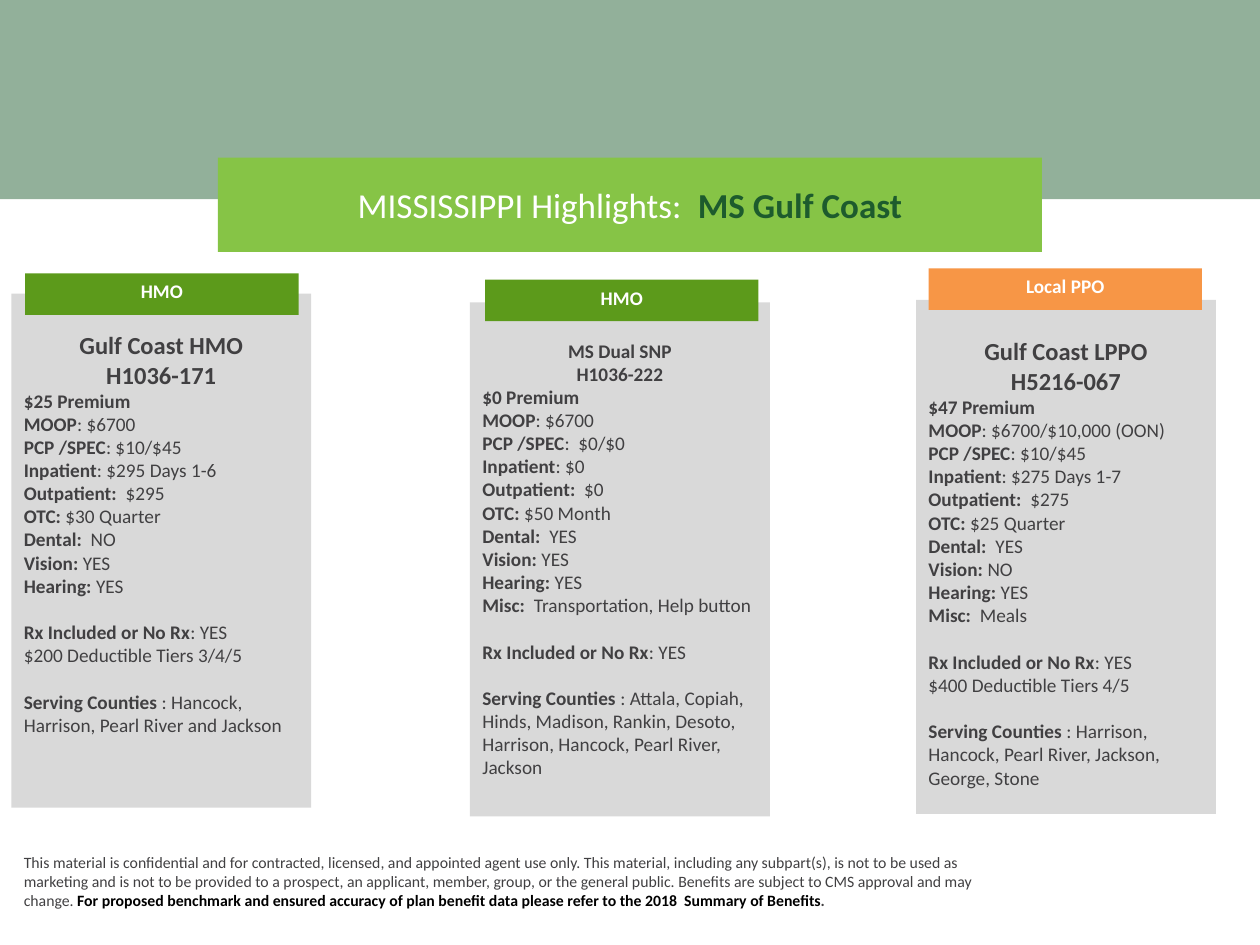
from lxml.etree import SubElement
from pptx import Presentation
from pptx.dml.color import RGBColor
from pptx.enum.shapes import MSO_SHAPE
from pptx.enum.text import MSO_ANCHOR, MSO_AUTO_SIZE, PP_ALIGN
from pptx.oxml.ns import qn
from pptx.util import Inches, Pt

COLORS = {
    "forest": "1D5B2D",
    "lime": "86C446",
    "leaf": "5C9A1B",
    "orange": "F79646",
    "panel": "D9D9D9",
    "text": "414042",
    "white": "FFFFFF",
    "black": "000000",
}
COLUMNS, ROWS = 100, 75

PLANS = [
    {
        "panel": (0.9, 23.3), "tab": (2, 21.7), "kind": "HMO", "color": "leaf",
        "name": ("Gulf Coast HMO", "H1036-171"), "name_size": 14,
        "sections": [
            [("$25 Premium", ""), ("MOOP", ": $6700"), ("PCP /SPEC", ": $10/$45"),
             ("Inpatient", ": $295 Days 1-6"), ("Outpatient:  ", "$295"),
             ("OTC:", " $30 Quarter"), ("Dental:  ", "NO"), ("Vision: ", "YES"),
             ("Hearing: ", "YES")],
            [("Rx Included or No Rx", ": YES"), ("", "$200 Deductible Tiers 3/4/5")],
            [("Serving Counties ", ": Hancock, Harrison, Pearl River and Jackson")],
        ],
    },
    {
        "panel": (37.3, 24), "tab": (38.5, 22.2), "kind": "HMO", "color": "leaf",
        "name": ("MS Dual SNP", "H1036-222"), "name_size": 11,
        "sections": [
            [("$0 Premium", ""), ("MOOP", ": $6700"), ("PCP /SPEC", ":  $0/$0"),
             ("Inpatient", ": $0"), ("Outpatient:  ", "$0"),
             ("OTC:", " $50 Month"), ("Dental:  ", "YES"), ("Vision: ", "YES"),
             ("Hearing: ", "YES"), ("Misc:  ", "Transportation, Help button")],
            [("Rx Included or No Rx", ": YES")],
            [("Serving Counties ", ": Attala, Copiah, Hinds, Madison, Rankin, Desoto, "
              "Harrison, Hancock, Pearl River, Jackson")],
        ],
    },
    {
        "panel": (72.7, 23.8), "tab": (73.7, 21.3), "kind": "Local PPO", "color": "orange",
        "name": ("Gulf Coast LPPO", "H5216-067"), "name_size": 14,
        "sections": [
            [("$47 Premium", ""), ("MOOP", ": $6700/$10,000 (OON)"), ("PCP /SPEC", ": $10/$45"),
             ("Inpatient", ": $275 Days 1-7"), ("Outpatient:  ", "$275"),
             ("OTC:", " $25 Quarter"), ("Dental:  ", "YES"), ("Vision: ", "NO"),
             ("Hearing: ", "YES"), ("Misc:  ", "Meals")],
            [("Rx Included or No Rx", ": YES"), ("", "$400 Deductible Tiers 4/5")],
            [("Serving Counties ", ": Harrison, Hancock, Pearl River, Jackson, George, Stone")],
        ],
    },
]


def add_text(paragraph, text, size=11, color="text", bold=False, font="Calibri"):
    run = paragraph.add_run()
    run.text = text
    run.font.name = font
    run.font.size = Pt(size)
    run.font.bold = bold
    run.font.color.rgb = RGBColor.from_string(COLORS[color])


class HighlightsSlide:
    """Holds the grid and the current slide, and draws each kind of element."""

    def __init__(self, presentation):
        self.column = presentation.slide_width / COLUMNS
        self.row = presentation.slide_height / ROWS
        self.slide = presentation.slides.add_slide(presentation.slide_layouts[5])

    def place(self, left, top, width, height):
        return (round(left * self.column), round(top * self.row),
                round(width * self.column), round(height * self.row))

    def block(self, box, color, opacity=None):
        shape = self.slide.shapes.add_shape(MSO_SHAPE.RECTANGLE, *self.place(*box))
        shape.shadow.inherit = False
        shape.line.fill.background()
        shape.fill.solid()
        shape.fill.fore_color.rgb = RGBColor.from_string(COLORS[color])
        if opacity is not None:
            fill_color = shape.element.spPr.find(".//" + qn("a:srgbClr"))
            SubElement(fill_color, qn("a:alpha"), val=str(opacity * 1000))
        shape.text_frame.word_wrap = True
        shape.text_frame.vertical_anchor = MSO_ANCHOR.TOP
        return shape

    def title(self, box, lead, region):
        title = self.slide.shapes.title
        title.left, title.top, title.width, title.height = self.place(*box)
        title.fill.solid()
        title.fill.fore_color.rgb = RGBColor.from_string(COLORS["lime"])
        frame = title.text_frame
        frame.auto_size = MSO_AUTO_SIZE.NONE
        frame.vertical_anchor = MSO_ANCHOR.MIDDLE
        paragraph = frame.paragraphs[0]
        paragraph.alignment = PP_ALIGN.CENTER
        add_text(paragraph, lead, size=20, color="white")
        add_text(paragraph, region, size=20, color="forest", bold=True)
        self.slide.shapes.element.append(title.element)

    def panel(self, plan):
        frame = self.block((*plan["panel"], 23.8, 40.8), "panel").text_frame
        frame.margin_top = Inches(0.29)
        paragraph = frame.paragraphs[0]
        for index, line in enumerate(plan["name"]):
            if index:
                paragraph = frame.add_paragraph()
            paragraph.alignment = PP_ALIGN.CENTER
            add_text(paragraph, line, size=plan["name_size"], bold=True)
        for section_index, section in enumerate(plan["sections"]):
            for row_index, (label, value) in enumerate(section):
                paragraph = frame.add_paragraph()
                paragraph.alignment = PP_ALIGN.LEFT
                if section_index and not row_index:
                    paragraph.space_before = Pt(13.4)
                if label:
                    add_text(paragraph, label, bold=True)
                if value:
                    add_text(paragraph, value)

    def tab(self, plan):
        frame = self.block((*plan["tab"], 21.7, 3.3), plan["color"]).text_frame
        frame.margin_left = frame.margin_right = Inches(0.05)
        paragraph = frame.paragraphs[0]
        paragraph.alignment = PP_ALIGN.CENTER
        add_text(paragraph, plan["kind"], color="white", bold=True)

    def disclaimer(self, box, notice, reference):
        frame = self.slide.shapes.add_textbox(*self.place(*box)).text_frame
        frame.word_wrap = True
        paragraph = frame.paragraphs[0]
        add_text(paragraph, notice, size=9)
        add_text(paragraph, reference, size=9, color="black", bold=True)
        add_text(paragraph, ".", size=9, bold=True)


def main():
    presentation = Presentation()
    presentation.slide_width, presentation.slide_height = Inches(10), Inches(7.5)
    page = HighlightsSlide(presentation)
    page.disclaimer(
        (0.9, 67.2, 78.2, 5.6),
        "This material is confidential and for contracted, licensed, and appointed agent "
        "use only. This material, including any subpart(s), is not to be used as marketing "
        "and is not to be provided to a prospect, an applicant, member, group, or the "
        "general public. Benefits are subject to CMS approval and may change. ",
        "For proposed benchmark and ensured accuracy of plan benefit data please refer to "
        "the 2018  Summary of Benefits",
    )
    page.block((0, 0, COLUMNS, 15.8), "forest", opacity=48)
    page.title((17.3, 12.5, 65.4, 7.5), "MISSISSIPPI Highlights:  ", "MS Gulf Coast")
    for plan in PLANS:
        page.panel(plan)
        page.tab(plan)
    presentation.save("out.pptx")


if __name__ == "__main__":
    main()
